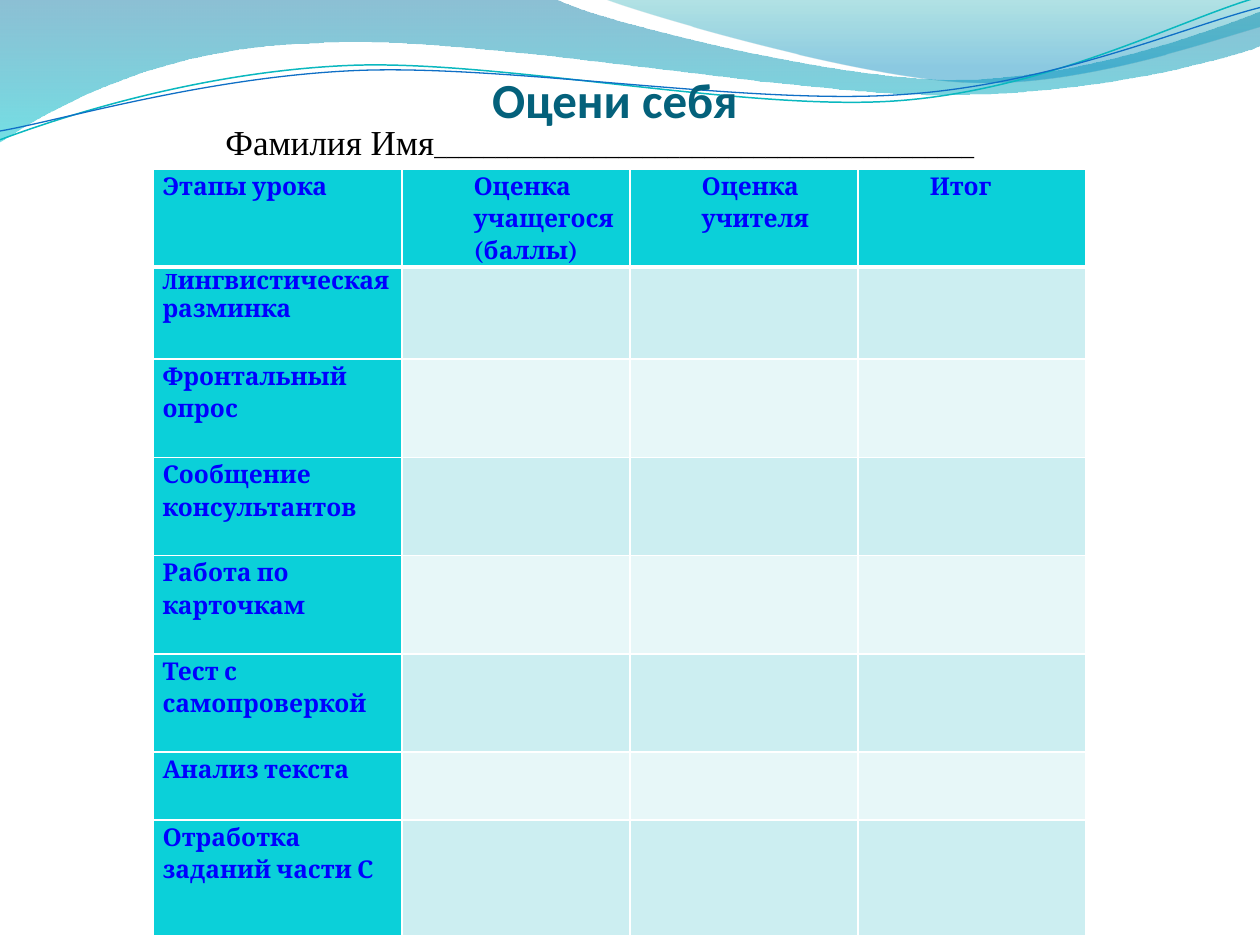
"""Build the self-assessment slide with a wave header and a score table."""
from dataclasses import dataclass

from lxml.etree import SubElement
from pptx import Presentation
from pptx.dml.color import RGBColor as RGB
from pptx.enum.text import MSO_ANCHOR as Anchor, PP_ALIGN as Align
from pptx.oxml.ns import qn
from pptx.util import Inches, Pt


@dataclass(frozen=True)
class Theme:
    title: str = "04617B"
    label: str = "0000FF"
    name: str = "000000"
    head: str = "0BD0D9"
    bands: tuple = ("CCEEF1", "E7F7F8")
    border: str = "FFFFFF"
    title_size: int = 28
    name_size: int = 20
    label_size: int = 14
    initial_size: int = 12
    title_font: str = "Calibri"
    label_font: str = "Cambria"
    name_font: str = "Times New Roman"


THEME = Theme()
WIDTH, HEIGHT = 10, 7.5
TITLE = "Оцени себя"
NAME_LABEL, BLANK = "Фамилия Имя", "_" * 44
HEADINGS = [["Этапы урока"], ["Оценка учащегося", "(баллы)"], ["Оценка учителя"], ["Итог"]]
STAGES = [
    ("Лингвистическая разминка", 0.73),
    ("Фронтальный опрос", 0.78),
    ("Сообщение консультантов", 0.78),
    ("Работа по карточкам", 0.78),
    ("Тест с самопроверкой", 0.78),
    ("Анализ текста", 0.54),
    ("Отработка заданий части С", 0.92),
]
HEAD_HEIGHT = 0.78
COLUMNS = [1.97, 1.81, 1.81, 1.81]
BANDS = [
    ([(0, 0), (4.4, -0.01), (4.76, 0.17, 6.64, 0.63, 7.58, 0.63),
      (8.53, 0.63, 9.58, 0.26, 10, 0.09), (10.01, 0.36),
      (9.83, 0.44, 8.7, 0.76, 7.46, 0.75), (6.22, 0.75, 3.82, 0.28, 2.57, 0.34),
      (1.29, 0.36, 0.46, 0.83, -0.01, 1.13)],
     [(0, "0074A1", 45), (1, "00C6CF", 55)]),
    ([(4.79, -0.01), (5.09, 0.11, 6.82, 0.62, 7.69, 0.65),
      (8.56, 0.69, 9.61, 0.32, 10, 0.21), (10, 0)],
     [(0, "00A1A9", 30), (0.8, "008BBF", 45)]),
]
STRANDS = [
    ([(0, 1.11), (0.48, 0.93, 1.58, 0.57, 2.77, 0.52),
      (3.95, 0.47, 5.93, 0.89, 7.13, 0.8), (8.33, 0.71, 9.38, 0.15, 9.98, -0.02)],
     "0AB8BF", 0.85),
    ([(0, 1.04), (0.47, 0.96, 1.64, 0.61, 2.83, 0.56),
      (4.03, 0.51, 5.97, 0.84, 7.17, 0.75), (8.36, 0.67, 9.41, 0.21, 10, 0.06)],
     "0F6FC6", 0.75),
]


def add_wave(slide, path, closed):
    anchors = [tuple(map(Inches, segment[-2:])) for segment in path]
    builder = slide.shapes.build_freeform(*anchors[0])
    builder.add_line_segments(anchors[1:], close=closed)
    wave = builder.convert_to_shape()
    wave.shadow.inherit = False
    for straight, segment in zip(list(wave._element.iter(qn("a:lnTo"))), path[1:]):
        if len(segment) == 6:
            straight.tag = qn("a:cubicBezTo")
            straight.remove(straight[0])
            for x, y in zip(segment[::2], segment[1::2]):
                SubElement(straight, qn("a:pt"), x=str(Inches(x) - wave.left),
                           y=str(Inches(y) - wave.top))
    return wave


def add_band(slide, path, stops):
    band = add_wave(slide, path, True)
    band.line.fill.background()
    band.fill.gradient()
    band.fill.gradient_angle = 270
    for stop, (position, color, _) in zip(band.fill.gradient_stops, stops):
        stop.position = position
        stop.color.rgb = RGB.from_string(color)
    colors = band._element.spPr.find(qn("a:gradFill")).iter(qn("a:srgbClr"))
    for color, (_, _, opacity) in zip(colors, stops):
        SubElement(color, qn("a:alpha"), val=str(opacity * 1000))


def add_strand(slide, path, color, weight):
    strand = add_wave(slide, path, False)
    strand.fill.background()
    strand.line.color.rgb = RGB.from_string(color)
    strand.line.width = Pt(weight)


def add_run(paragraph, words, size, font, color, bold=False):
    run = paragraph.add_run()
    run.text = words
    run.font.size, run.font.name, run.font.bold = Pt(size), font, bold
    run.font.color.rgb = RGB.from_string(color)


def add_label(paragraph, words, size=THEME.label_size):
    add_run(paragraph, words, size, THEME.label_font, THEME.label, True)


def style_cell(cell, color, top=1, bottom=1):
    properties = cell._tc.get_or_add_tcPr()
    for side, weight in zip("LRTB", (1, 1, top, bottom)):
        edge = SubElement(properties, qn(f"a:ln{side}"), w=str(Pt(weight)))
        SubElement(SubElement(edge, qn("a:solidFill")), qn("a:srgbClr"), val=THEME.border)
    cell.fill.solid()
    cell.fill.fore_color.rgb = RGB.from_string(color)
    cell.margin_left = cell.margin_right = Inches(0.07)
    cell.margin_top = cell.margin_bottom = 0


def add_scores(slide):
    heights = [HEAD_HEIGHT] + [height for _, height in STAGES]
    scores = slide.shapes.add_table(
        len(heights), len(COLUMNS), Inches(1.22), Inches(1.34),
        Inches(sum(COLUMNS)), Inches(sum(heights))).table
    for column, width in zip(scores.columns, COLUMNS):
        column.width = Inches(width)
    for row, height in zip(scores.rows, heights):
        row.height = Inches(height)
    for index, lines in enumerate(HEADINGS):
        heading = scores.cell(0, index)
        style_cell(heading, THEME.head, bottom=3)
        for number, words in enumerate(lines):
            frame = heading.text_frame
            paragraph = frame.add_paragraph() if number else frame.paragraphs[0]
            paragraph.line_spacing = 1.15
            if index:
                paragraph._p.get_or_add_pPr().set("marL", str(Inches(0.5)))
            add_label(paragraph, words)
    for row, (stage, _) in enumerate(STAGES, 1):
        for column in range(len(COLUMNS)):
            color = THEME.bands[(row - 1) % 2] if column else THEME.head
            style_cell(scores.cell(row, column), color, top=3 if row == 1 else 1)
        paragraph = scores.cell(row, 0).text_frame.paragraphs[0]
        if row == 1:
            add_label(paragraph, stage[0], THEME.initial_size)
            add_label(paragraph, stage[1:])
        else:
            paragraph.line_spacing = 1.15
            add_label(paragraph, stage)


def add_title(slide):
    title = slide.shapes.title
    title.left, title.top, title.width, title.height = map(Inches, (0.38, 0, 9, 1.02))
    frame = title.text_frame
    frame.vertical_anchor = Anchor.BOTTOM
    frame.margin_left = frame.margin_right = frame.margin_bottom = 0
    frame.paragraphs[0].alignment = Align.CENTER
    add_run(frame.paragraphs[0], TITLE, THEME.title_size, THEME.title_font, THEME.title, True)
    slide.shapes._spTree.append(title._element)


def add_name_line(slide):
    frame = slide.shapes.add_textbox(*map(Inches, (1.69, 0.9, 6.38, 0.44))).text_frame
    frame.word_wrap = True
    frame.vertical_anchor = Anchor.MIDDLE
    paragraph = frame.paragraphs[0]
    paragraph.alignment = Align.JUSTIFY
    add_run(paragraph, NAME_LABEL, THEME.name_size, THEME.name_font, THEME.name)
    add_run(paragraph, BLANK, THEME.label_size, THEME.name_font, THEME.name)


def main():
    deck = Presentation()
    deck.slide_width, deck.slide_height = Inches(WIDTH), Inches(HEIGHT)
    slide = deck.slides.add_slide(deck.slide_layouts[5])
    for band in BANDS:
        add_band(slide, *band)
    for strand in STRANDS:
        add_strand(slide, *strand)
    add_title(slide)
    add_scores(slide)
    add_name_line(slide)
    deck.save("out.pptx")


if __name__ == "__main__":
    main()
